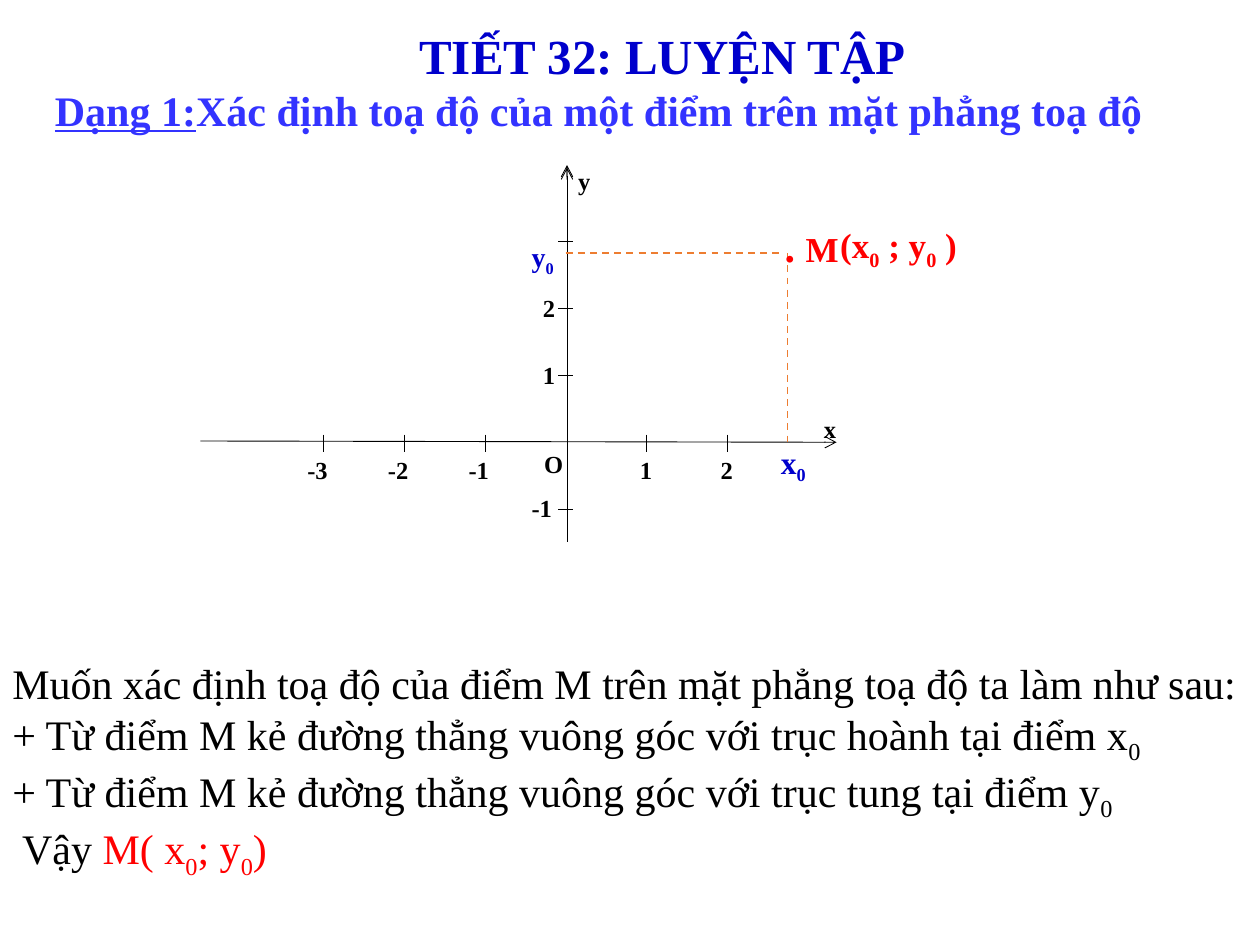
from lxml.etree import SubElement
from pptx import Presentation
from pptx.dml.color import RGBColor
from pptx.enum.dml import MSO_LINE
from pptx.enum.shapes import MSO_CONNECTOR
from pptx.enum.text import MSO_AUTO_SIZE, PP_ALIGN
from pptx.oxml.ns import qn
from pptx.util import Inches, Pt

BLACK, BLUE, RED, ORANGE = "000000", "0000CC", "FF0000", "ED7D31"


def color(code):
    return RGBColor.from_string(code)


def write(par, text, size, shade, bold=False, under=False):
    for num, part in enumerate(text.split("₀")):
        for bit, low in (("0", True), (part, False)):
            if not bit or (low and num == 0):
                continue
            run = par.add_run()
            run.text = bit
            font = run.font
            font.name, font.size = "Times New Roman", Pt(size)
            font.bold, font.underline = bold, under
            font.color.rgb = color(shade)
            if low:
                font._element.set("baseline", "-25000")


def add_text(shapes, box, text, size=14, shade=BLACK, bold=True, wrap=True,
             grow=False, align=None, line=None, after=None, before=None):
    shape = shapes.add_textbox(*map(Inches, box))
    frame = shape.text_frame
    frame.word_wrap = wrap
    if grow:
        frame.auto_size = MSO_AUTO_SIZE.SHAPE_TO_FIT_TEXT
    rows = [text] if isinstance(text, str) else text
    for num, row in enumerate(rows):
        par = frame.add_paragraph() if num else frame.paragraphs[0]
        par.alignment = align
        if line:
            par.line_spacing = line
        if after:
            par.space_after = Pt(after)
        if before:
            gap = SubElement(par._p.get_or_add_pPr(), qn("a:spcBef"))
            SubElement(gap, qn("a:spcPct")).set("val", str(before * 1000))
        for part, style in [(row, {})] if isinstance(row, str) else row:
            write(par, part, **{"size": size, "shade": shade, "bold": bold, **style})
    return shape


def add_label(shapes, left, top, text, wide=0.51, high=0.4, **style):
    add_text(shapes, (left, top, wide, high), text, line=1.07, after=8, **style)


def add_line(shapes, ends, shade=BLACK, width=0.5, dash=False, arrow=False):
    link = shapes.add_connector(MSO_CONNECTOR.STRAIGHT, *map(Inches, ends))
    link.line.color.rgb = color(shade)
    link.line.width = Pt(width)
    if dash:
        link.line.dash_style = MSO_LINE.DASH
    if arrow:
        SubElement(link.line._get_or_add_ln(), qn("a:tailEnd")).set("type", "arrow")
    SubElement(link._element.spPr, qn("a:effectLst"))


def add_head(shapes, left, top):
    add_text(shapes, (left + 2.94, top, 4.25, 0.57), "TIẾT 32: LUYỆN TẬP",
             size=28, shade=BLUE, grow=True, before=50)
    add_text(shapes, (left, top + 0.47, 8.92, 0.51),
             [[("Dạng 1:", {"under": True}),
               ("Xác định toạ độ của một điểm trên mặt phẳng toạ độ", {})]],
             size=24, shade="3333FF", wrap=False, grow=True, align=PP_ALIGN.CENTER)


def add_axes(shapes, left, top, wide, high):
    group = shapes.add_group_shape().shapes
    mid, base = left + 2.9, top + 2.2
    step, rise, half = 0.64, 0.53, 0.06
    for tip in (top, top + 0.02):
        add_line(group, (mid + 0.01, top + high, mid + 0.01, tip), arrow=True)
    add_line(group, (left, base - 0.01, left + wide, base), arrow=True)
    for num in (-3, -2, -1, 1, 2):
        spot = mid + num * step
        add_line(group, (spot, base - half, spot, base + 0.08))
        shift = 0.15 if num > 0 else 0.23
        add_label(group, spot - shift, base + 0.04, str(num))
    for num in (-1, 1, 2, 3):
        spot = base - num * rise
        add_line(group, (mid - half, spot, mid + half, spot))
        if num < 3:
            shift = 0.28 if num > 0 else 0.37
            add_label(group, mid - shift, spot - 0.19, str(num))
    add_label(group, mid - 0.27, base - 0.01, "O")
    add_label(group, mid, top - 0.06, "y")
    add_label(group, left + wide - 0.2, base - 0.29, "x")


def add_point(shapes, left, top, wide, high):
    right = left + wide
    add_line(shapes, (left, top, right - 0.03, top), shade=ORANGE, width=1, dash=True)
    add_line(shapes, (right, top, right, top + high), shade=ORANGE, width=1, dash=True)
    add_label(shapes, right - 0.15, top + high - 0.1, "x₀", wide=0.67, high=0.67,
              size=18, shade=BLUE)
    add_label(shapes, left - 0.37, top - 0.18, "y₀", size=16, shade=BLUE)
    add_label(shapes, right - 0.12, top - 0.34, [[(". ", {"size": 24}), ("M", {})]],
              wide=2.2, high=0.89, size=20, shade=RED)
    add_label(shapes, right + 0.32, top - 0.31, "(x₀ ; y₀ )", wide=1.16, high=0.44,
              size=20, shade=RED, grow=True)


def add_steps(shapes, box):
    lead = "+ Từ điểm M kẻ đường thẳng vuông góc với trục "
    add_text(shapes, box, [
        "Muốn xác định toạ độ của điểm M trên mặt phẳng toạ độ ta làm như sau:",
        lead + "hoành tại điểm x₀",
        lead + "tung tại điểm y₀",
        [(" Vậy ", {}), ("M( x₀; y₀)", {"shade": RED})],
    ], size=24, bold=False, grow=True)


def main():
    deck = Presentation()
    deck.slide_width, deck.slide_height = Inches(10), Inches(7.5)
    shapes = deck.slides.add_slide(deck.slide_layouts[6]).shapes
    add_steps(shapes, (0, 5.17, 10, 1.72))
    add_axes(shapes, 1.59, 1.31, 5.05, 2.99)
    add_point(shapes, 4.49, 2.01, 1.76, 1.53)
    add_head(shapes, 0.29, 0.15)
    deck.save("out.pptx")


if __name__ == "__main__":
    main()
